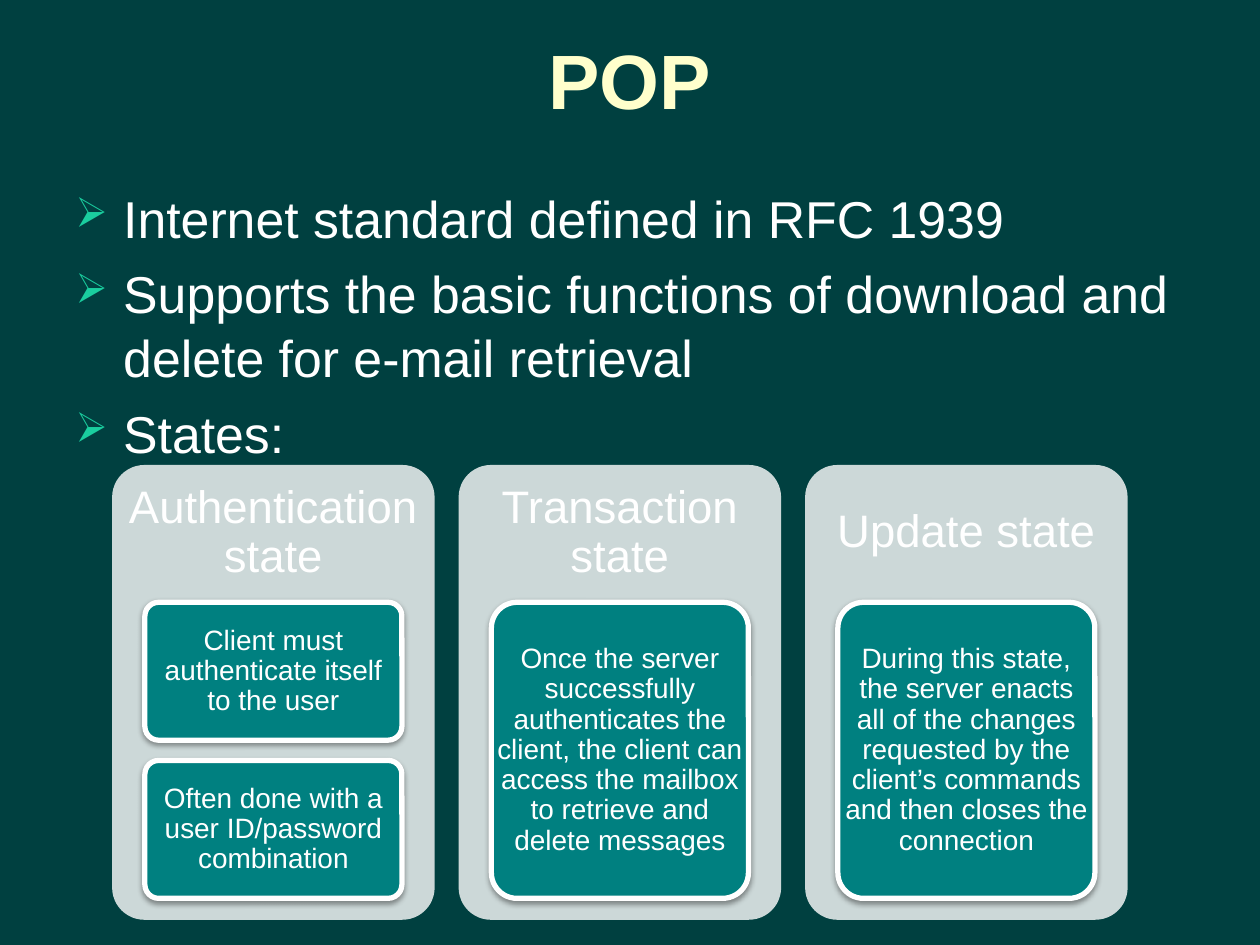
from lxml import etree
from pptx import Presentation
from pptx.dml.color import RGBColor
from pptx.enum import shapes, text
from pptx.oxml import parse_xml
from pptx.oxml.ns import nsdecls
from pptx.util import Inches, Pt

COLORS = {"bg": "004040", "title": "FFFFCC", "white": "FFFFFF", "bullet": "1ACE9F",
          "panel": "CCD8D8", "card": "008080", "shadow": "000000"}
BULLETS = ["Internet standard defined in RFC 1939",
           "Supports the basic functions of download and delete for e-mail retrieval",
           "States:"]
STATES = [
    ("Authentication state", ["Client must authenticate itself to the user",
                              "Often done with a user ID/password combination"]),
    ("Transaction state", ["Once the server successfully authenticates the client, the client can "
                           "access the mailbox to retrieve and delete messages"]),
    ("Update state", ["During this state, the server enacts all of the changes requested by the "
                      "client’s commands and then closes the connection"]),
]


def add_text(box, lines, size, color, align, margins=(0.1, 0.05), bold=False):
    tb = s.shapes.add_textbox(*[Inches(v) for v in box])
    tf = tb.text_frame
    tf.word_wrap = True
    tf.vertical_anchor = text.MSO_ANCHOR.MIDDLE
    tf.margin_left = tf.margin_right = Inches(margins[0])
    tf.margin_top = tf.margin_bottom = Inches(margins[1])
    tf.text = "\n".join(lines)
    for p in tf.paragraphs:
        p.alignment = align
        for r in p.runs:
            r.font.name = "Arial"
            r.font.size = Pt(size)
            r.font.bold = bold
            r.font.color.rgb = RGBColor.from_string(COLORS[color])
    return tf


def add_box(box, color):
    sp = s.shapes.add_shape(shapes.MSO_SHAPE.ROUNDED_RECTANGLE, *[Inches(v) for v in box])
    sp.adjustments[0] = 0.1
    sp.shadow.inherit = False
    sp.fill.solid()
    sp.fill.fore_color.rgb = RGBColor.from_string(COLORS[color])
    sp.line.fill.background()
    return sp


prs = Presentation()
prs.slide_width, prs.slide_height = Inches(10), Inches(7.5)
s = prs.slides.add_slide(prs.slide_layouts[6])
s.background.fill.solid()
s.background.fill.fore_color.rgb = RGBColor.from_string(COLORS["bg"])
center = text.PP_ALIGN.CENTER

add_text((0.5, 0, 9, 1.25), ["POP"], 44, "title", center, bold=True)

tf = add_text((0.5, 1.42, 9, 2.14), BULLETS, 29.6, "white", text.PP_ALIGN.LEFT)
tf.vertical_anchor = text.MSO_ANCHOR.TOP
for p in tf.paragraphs:
    p.space_before = Pt(6.4)
    p.line_spacing = 1.03
    pPr = p._p.get_or_add_pPr()
    pPr.set("marL", str(Inches(0.38)))
    pPr.set("indent", str(Inches(-0.38)))
    for xml in (f'<a:buClr {nsdecls("a")}><a:srgbClr val="{COLORS["bullet"]}"/></a:buClr>',
                f'<a:buSzPct {nsdecls("a")} val="80000"/>',
                f'<a:buChar {nsdecls("a")} char="➢"/>'):
        pPr.append(parse_xml(xml))

left, top, width, height, pitch = 0.89, 3.69, 2.56, 3.61, 2.75
header, inset, gap, body = 1.08, 0.26, 0.16, 2.35
for i, (name, notes) in enumerate(STATES):
    x = left + i * pitch
    add_box((x, top, width, height), "panel")
    tf = add_text((x, top, width, header), [name], 26, "white", center, (0.11, 0.11))
    tf.paragraphs[0].line_spacing = 0.9
    card_h = (body - gap * (len(notes) - 1)) / len(notes)
    for j, note in enumerate(notes):
        box = (x + inset, top + header + 0.01 + j * (card_h + gap), width - 2 * inset, card_h)
        sp = add_box(box, "card")
        sp.line.color.rgb = RGBColor.from_string(COLORS["white"])
        sp.line.width = Pt(3)
        effects = sp._element.spPr.find("{*}effectLst")
        shadow = etree.SubElement(effects, effects.tag.replace("effectLst", "outerShdw"),
                                  blurRad=str(Pt(3.1)), dist=str(Pt(1.6)),
                                  dir="5400000", rotWithShape="0")
        shadow.append(parse_xml(f'<a:srgbClr {nsdecls("a")} val="{COLORS["shadow"]}">'
                                '<a:alpha val="38000"/></a:srgbClr>'))
        tf = add_text(box, [note], 16, "white", center, (0.04, 0.03))
        tf.paragraphs[0].line_spacing = 0.9

prs.save("out.pptx")
